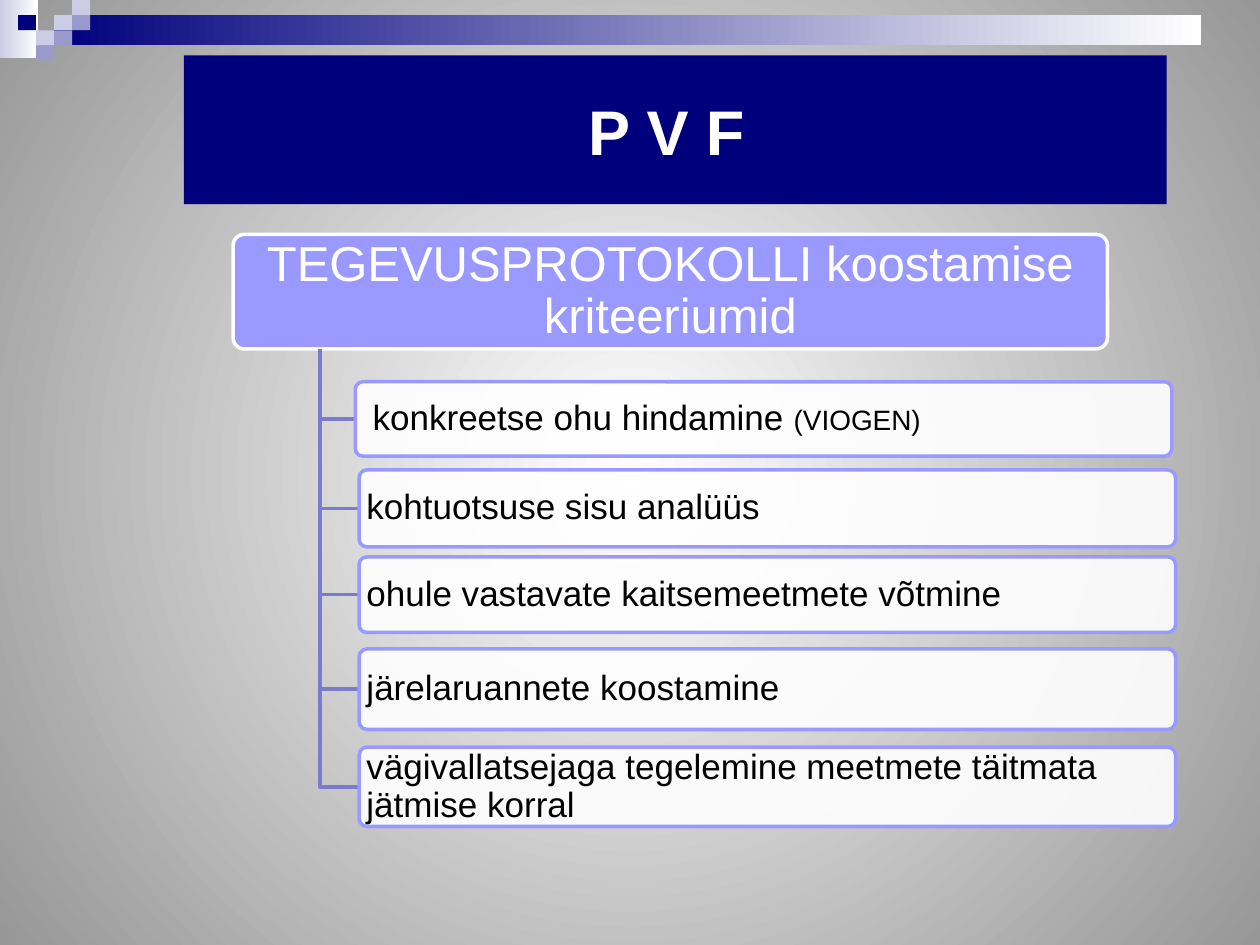
from lxml import etree
from pptx import Presentation
from pptx.dml.color import RGBColor
from pptx.enum.shapes import MSO_SHAPE
from pptx.enum.text import MSO_ANCHOR, PP_ALIGN
from pptx.oxml.ns import qn
from pptx.util import Inches, Pt

RECT, ROUND = MSO_SHAPE.RECTANGLE, MSO_SHAPE.ROUNDED_RECTANGLE
LEFT, CENTER = PP_ALIGN.LEFT, PP_ALIGN.CENTER
MIDDLE = MSO_ANCHOR.MIDDLE

# Content
TITLE = "P V F"
HEAD = "TEGEVUSPROTOKOLLI koostamise kriteeriumid"
# Text runs, left, top, height, left inset
ITEMS = [
    (["konkreetse ohu hindamine ", "(VIOGEN)"], 2.82, 3.03, 0.59, 0.12),
    (["kohtuotsuse sisu analüüs"], 2.85, 3.73, 0.61, 0.04),
    (["ohule vastavate kaitsemeetmete võtmine"], 2.85, 4.42, 0.6, 0.04),
    (["järelaruannete koostamine"], 2.85, 5.15, 0.64, 0.04),
    (["vägivallatsejaga tegelemine meetmete täitmata jätmise korral"],
     2.85, 5.93, 0.63, 0.04),
]
ITEM_W = 6.48
HEAD_BOX = (1.85, 1.86, 6.94, 0.91)
TRUNK = 2.54

# Corner squares: column, row, colour name
CELL_W, CELL_H = 0.143, 0.12
CELLS = [(3, 1, "pale"), (4, 0, "pale"), (4, 1, "mid"), (2, 2, "pale"),
         (1, 1, "navy"), (3, 2, "mid"), (2, 3, "mid")]

THEME = {
    "font": "Arial", "title": 36, "head": 28, "item": 20, "note": 16,
    "line": 2, "white": "FFFFFF", "black": "000000", "gray": "979797",
    "navy": "00007D", "pale": "CCCCE6", "mid": "9999CC",
    "lilac": "9999FF", "link": "7B7BCC",
}


def tint(name):
    return RGBColor.from_string(THEME[name])


def blend(fill, start, end):
    fill.gradient()
    for stop, name in zip(fill.gradient_stops, (start, end)):
        stop.color.rgb = tint(name)
    fill.gradient_angle = 0


def add_box(slide, kind, box, color=None, edge=None):
    shape = slide.shapes.add_shape(kind, *map(Inches, box))
    shape.shadow.inherit = False
    if kind == ROUND:
        shape.adjustments[0] = 0.1
    if color:
        shape.fill.solid()
        shape.fill.fore_color.rgb = tint(color)
    if edge:
        shape.line.color.rgb = tint(edge)
        shape.line.width = Pt(THEME["line"])
    else:
        shape.line.fill.background()
    return shape


def add_text(shape, runs, sizes, color, align, pad, bold=False, space=0.9):
    frame = shape.text_frame
    frame.word_wrap = True
    frame.vertical_anchor = MIDDLE
    (frame.margin_left, frame.margin_top,
     frame.margin_right, frame.margin_bottom) = map(Inches, pad)
    para = frame.paragraphs[0]
    para.alignment = align
    para.line_spacing = space
    for text, size in zip(runs, sizes):
        run = para.add_run()
        run.text = text
        run.font.name = THEME["font"]
        run.font.size = Pt(THEME[size])
        run.font.bold = bold
        run.font.color.rgb = tint(color)


def add_link(slide, top, left, mid):
    start, *rest = [(Inches(x), Inches(y)) for x, y in
                    ((TRUNK, top), (TRUNK, mid), (left, mid))]
    pen = slide.shapes.build_freeform(*start)
    pen.add_line_segments(rest, close=False)
    link = pen.convert_to_shape()
    link.shadow.inherit = False
    link.fill.background()
    link.line.color.rgb = tint("link")
    link.line.width = Pt(THEME["line"])


def add_back(slide):
    blend(slide.background.fill, "white", "gray")
    grad = slide.element.find(".//" + qn("a:gradFill"))
    grad.remove(grad.find(qn("a:lin")))
    ring = etree.SubElement(grad, qn("a:path"), {"path": "circle"})
    etree.SubElement(ring, qn("a:fillToRect"),
                     dict.fromkeys("ltrb", "50000"))


def main():
    deck = Presentation()
    deck.slide_width, deck.slide_height = Inches(10), Inches(7.5)
    slide = deck.slides.add_slide(deck.slide_layouts[6])
    add_back(slide)

    # Top bar and corner squares
    blend(add_box(slide, RECT, (0, 0, 0.3, 0.46)).fill, "pale", "white")
    blend(add_box(slide, RECT, (0.43, 0.12, 9.1, 0.24)).fill, "navy", "white")
    for col, row, color in CELLS:
        add_box(slide, RECT,
                (col * CELL_W, row * CELL_H, CELL_W, CELL_H), color)

    # Title
    title = add_box(slide, RECT, (1.46, 0.44, 7.8, 1.18), "navy")
    add_text(title, [TITLE], ["title"], "white", CENTER,
             (0.1, 0.05, 0.24, 0.05), bold=True, space=1.0)

    # Heading
    head = add_box(slide, ROUND, HEAD_BOX, "lilac", "white")
    add_text(head, [HEAD], ["head"], "white", CENTER,
             (0.06, 0.04, 0.06, 0.04))

    # Criteria, each linked to the heading
    base = HEAD_BOX[1] + HEAD_BOX[3]
    for runs, left, top, height, inset in ITEMS:
        add_link(slide, base, left, top + height / 2)
        item = add_box(slide, ROUND, (left, top, ITEM_W, height),
                       "white", "lilac")
        shade = item.fill._xPr.find(qn("a:solidFill"))[0]
        etree.SubElement(shade, qn("a:alpha"), val="90000")
        add_text(item, runs, ["item", "note"], "black", LEFT,
                 (inset, 0.03, 0.04, 0.03))

    deck.save("out.pptx")


if __name__ == "__main__":
    main()
